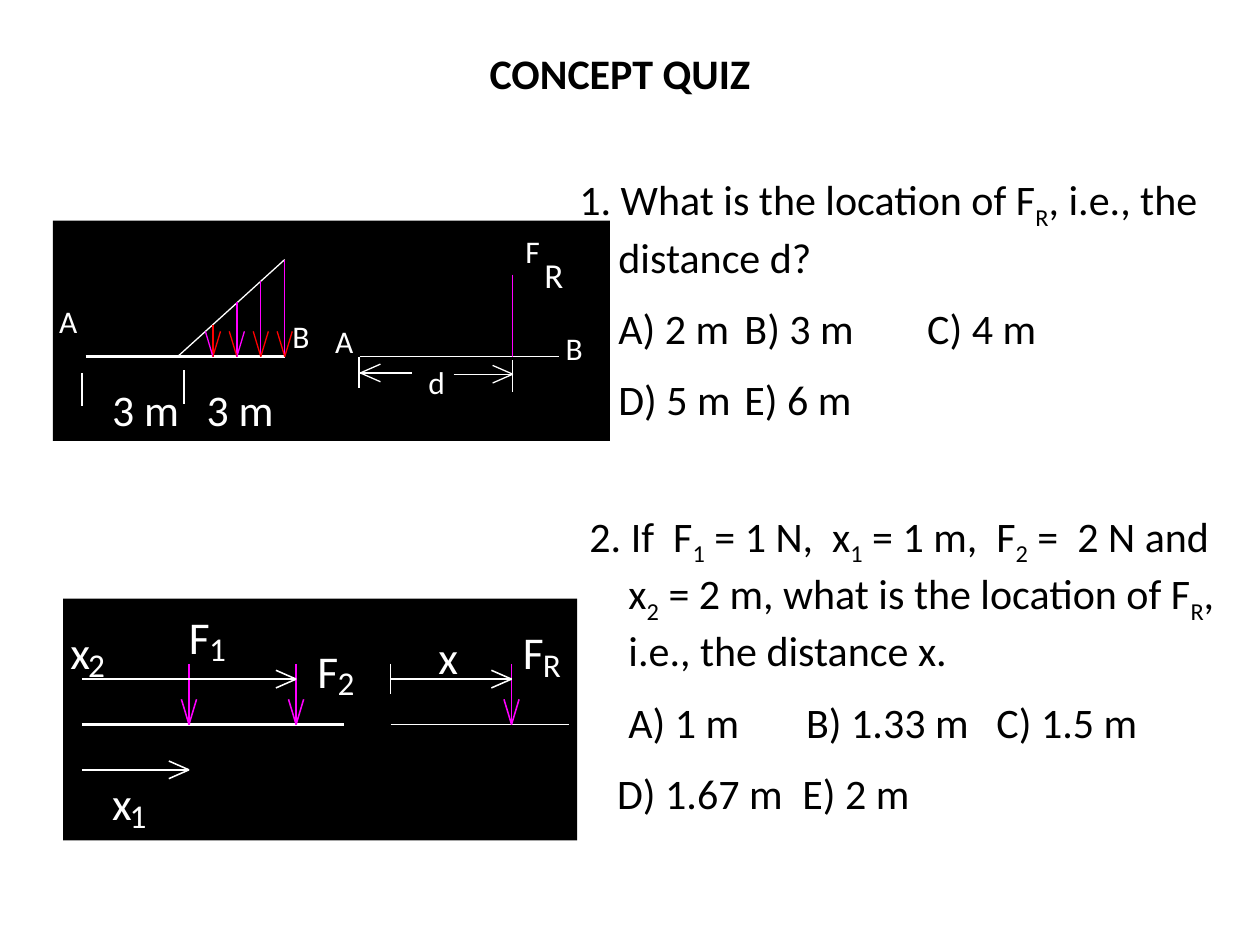
"""Build the concept quiz slide with two force diagrams and two questions."""
from lxml import etree
from pptx import Presentation
from pptx.dml.color import RGBColor
from pptx.enum import shapes, text
from pptx.oxml import ns
from pptx.util import Inches, Pt

BLACK = RGBColor(0, 0, 0)
WHITE = RGBColor(255, 255, 255)
MAGENTA = RGBColor(255, 0, 255)
RED = RGBColor(255, 0, 0)
FONT = "Calibri"


def add_span(para, words, size, color):
    span = para.add_run()
    span.text = words
    span.font.name = FONT
    span.font.size = Pt(size)
    span.font.color.rgb = color
    return span


def add_stroke(figure, x1, y1, x2, y2, color, width):
    stroke = figure.shapes.add_connector(
        shapes.MSO_CONNECTOR.STRAIGHT, Inches(x1), Inches(y1), Inches(x2), Inches(y2))
    stroke.line.color.rgb = color
    stroke.line.width = Pt(width)
    etree.SubElement(stroke._element.spPr, ns.qn("a:effectLst"))


deck = Presentation()
deck.slide_width, deck.slide_height = Inches(10), Inches(7.5)
page = deck.slides.add_slide(deck.slide_layouts[5])

title = page.shapes.title
title.left, title.top = Inches(1.42), Inches(0.33)
title.width, title.height = Inches(7), Inches(0.5)
title.text_frame.vertical_anchor = text.MSO_ANCHOR.TOP
heading = title.text_frame.paragraphs[0]
heading.alignment = text.PP_ALIGN.CENTER
add_span(heading, "CONCEPT QUIZ", 24, BLACK).font.bold = True

questions = [
    ((4.5, 1.33, 5.25, 2.1),
     [("1. What is the location of F", "R"), (", i.e., the distance d?", "")],
     [("\tA) 2 m\tB) 3 m\tC) 4 m", (0.31, 1.31, 2.76)),
      ("\tD) 5 m\tE) 6 m", (0.31, 1.31))]),
    ((4.58, 4, 5.17, 2.5),
     [("2. If  F", "1"), (" = 1 N,  x", "1"), (" = 1 m,  F", "2"), (" =  2 N and x", "2"),
      (" = 2 m, what is the location of F", "R"), (", i.e., the distance x.", "")],
     [("\tA) 1 m\tB) 1.33 m\tC) 1.5 m", (0.31, 1.72, 3.23)),
      ("\tD) 1.67 m\tE) 2 m", (0.22, 1.69))]),
]
for place, parts, answers in questions:
    box = page.shapes.add_textbox(*map(Inches, place))
    box.text_frame.word_wrap = True
    para = box.text_frame.paragraphs[0]
    props = para._p.get_or_add_pPr()
    props.set("marL", str(Inches(0.31)))
    props.set("indent", str(-Inches(0.31)))
    for words, subscript in parts:
        add_span(para, words, 24, BLACK)
        if subscript:
            span = add_span(para, subscript, 24, BLACK)
            span._r.get_or_add_rPr().set("baseline", "-25000")
    for words, stops in answers:
        para = box.text_frame.add_paragraph()
        para.space_before = Pt(12)
        tabs = etree.SubElement(para._p.get_or_add_pPr(), ns.qn("a:tabLst"))
        for stop in stops:
            etree.SubElement(tabs, ns.qn("a:tab"), pos=str(Inches(stop)), algn="l")
        add_span(para, words, 24, BLACK)

two_forces = {
    "panel": (0.5, 4.75, 4.08, 1.92),
    "width": 0.88,
    "beams": [(0.65, 5.75, 2.73, 5.75, 1.63), (3.1, 5.75, 4.52, 5.75, 0.88)],
    "lines": [(3.1, 5.27, 3.1, 5.51)],
    "forces": [(x, 5.27, 5.75, MAGENTA, MAGENTA, MAGENTA) for x in (1.5, 2.35, 4.06)],
    "distances": [(0.65, 2.35, 5.39), (0.65, 1.5, 6.11), (3.1, 4.06, 5.39)],
    "labels": [("x", 3.48, 4.99, 26)],
}
for letter, digit, x, y in [("F", "R", 4.15, 4.95), ("F", "2", 2.52, 5.1), ("F", "1", 1.5, 4.83),
                            ("x", "1", 0.89, 6.15), ("x", "2", 0.56, 4.95)]:
    shift = 0.16 if letter == "F" else 0.14
    two_forces["labels"] += [(letter, x, y, 26), (digit, x + shift, y + 0.16, 19)]

triangular_load = {
    "panel": (0.42, 1.75, 4.42, 1.75),
    "width": 0.75,
    "beams": [(0.68, 2.83, 2.26, 2.83, 1.63), (2.86, 2.83, 4.44, 2.83, 0.75)],
    "lines": [(1.41, 2.83, 2.26, 2.06), (2.85, 2.83, 2.85, 3.08), (4.07, 2.86, 4.07, 3.11),
              (0.65, 2.96, 0.65, 3.22), (1.46, 2.94, 1.46, 3.21)],
    "forces": [(1.69, 2.58, 2.83, RED, MAGENTA, RED),
               (1.88, 2.4, 2.83, MAGENTA, RED, MAGENTA),
               (2.07, 2.23, 2.83, MAGENTA, RED, RED),
               (2.26, 2.06, 2.83, MAGENTA, RED, RED),
               (4.07, 2.18, 2.83, MAGENTA, None, None)],
    "distances": [(3.27, 2.86, 2.96), (3.6, 4.07, 2.97)],
    "labels": [("F", 4.17, 1.84, 18), ("R", 4.32, 2.01, 20), ("B", 4.49, 2.61, 18),
               ("A", 2.66, 2.56, 18), ("d", 3.4, 2.88, 18), ("B", 2.32, 2.52, 18),
               ("A", 0.47, 2.4, 18), ("3 m", 0.89, 3.04, 25), ("3 m", 1.64, 3.04, 25)],
}

for diagram in (two_forces, triangular_load):
    figure = page.shapes.add_group_shape()
    panel = figure.shapes.add_shape(
        shapes.MSO_SHAPE.RECTANGLE, *map(Inches, diagram["panel"]))
    panel.shadow.inherit = False
    panel.fill.solid()
    panel.fill.fore_color.rgb = BLACK
    panel.line.fill.background()
    width = diagram["width"]
    for *ends, thickness in diagram["beams"]:
        add_stroke(figure, *ends, WHITE, thickness)
    for ends in diagram["lines"]:
        add_stroke(figure, *ends, WHITE, width)
    for x, top, tip, shaft, left_barb, right_barb in diagram["forces"]:
        add_stroke(figure, x, top, x, tip, shaft, width)
        for offset, color in ((-0.06, left_barb), (0.06, right_barb)):
            if color:
                add_stroke(figure, x, tip, x + offset, tip - 0.2, color, width)
    for start, tip, y in diagram["distances"]:
        add_stroke(figure, start, y, tip, y, WHITE, width)
        back = -0.16 if tip > start else 0.16
        for offset in (-0.07, 0.07):
            add_stroke(figure, tip, y, tip + back, y + offset, WHITE, width)
    for words, x, y, size in diagram["labels"]:
        label = figure.shapes.add_textbox(
            Inches(x), Inches(y), Inches(0.2 if len(words) == 1 else 0.6), Inches(size / 60))
        frame = label.text_frame
        frame.word_wrap = True
        frame.margin_left = frame.margin_right = frame.margin_top = frame.margin_bottom = 0
        add_span(frame.paragraphs[0], words, size, WHITE)

deck.save("out.pptx")
